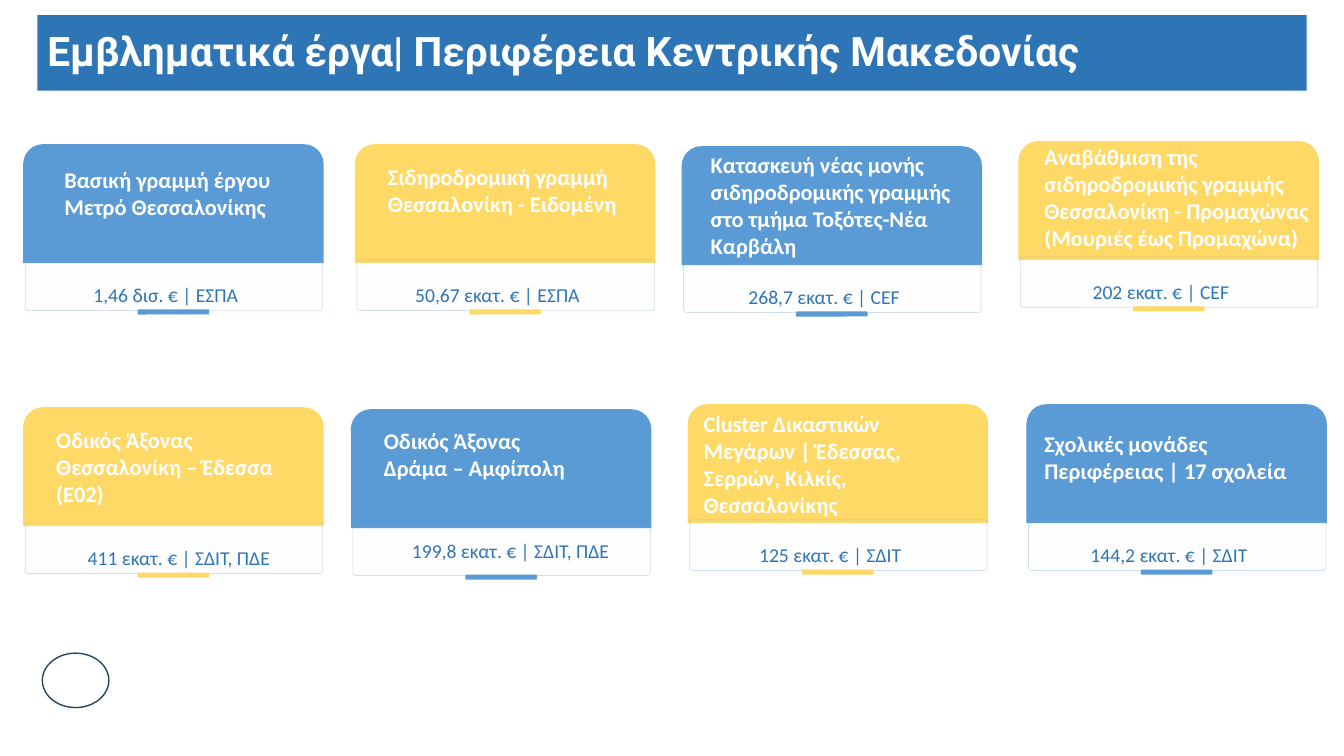
from lxml import etree
from pptx import Presentation
from pptx.dml.color import RGBColor
from pptx.enum.shapes import MSO_SHAPE
from pptx.enum.text import MSO_ANCHOR, PP_ALIGN
from pptx.oxml.ns import qn
from pptx.util import Inches, Pt

TOP_ROUNDED = MSO_SHAPE.ROUND_2_SAME_RECTANGLE
ROUNDED = MSO_SHAPE.ROUNDED_RECTANGLE
OVAL = MSO_SHAPE.OVAL
TOP, MIDDLE = MSO_ANCHOR.TOP, MSO_ANCHOR.MIDDLE
LEFT, CENTER = PP_ALIGN.LEFT, PP_ALIGN.CENTER

BLUE = RGBColor(0x5B, 0x9B, 0xD5)
YELLOW = RGBColor(0xFF, 0xD9, 0x66)
DARK_BLUE = RGBColor(0x2E, 0x75, 0xB6)
NAVY = RGBColor(0x28, 0x44, 0x5D)
GREY = RGBColor(0xE7, 0xE6, 0xE6)
WHITE = RGBColor(0xFF, 0xFF, 0xFF)

CARD_WIDTH, HEADER_HEIGHT = 2.98, 1.18
PANEL_WIDTH, PANEL_HEIGHT = 2.95, 0.5
BAR_WIDTH, BAR_HEIGHT = 0.71, 0.05

# Card left and top, colour, project name with its box, amount with its box.
# Boxes are left, top, width, height measured from the card's corner.
AMOUNT_BOX = (0.4, 1.32, 2.03, 0.34)
CARDS = [
    (0.23, 1.43, BLUE, "Βασική γραμμή έργου Μετρό Θεσσαλονίκης",
     (0.31, 0.17, 2.9, 0.64), "1,46 δισ. € | ΕΣΠΑ", AMOUNT_BOX),
    (3.52, 1.43, YELLOW, "Σιδηροδρομική γραμμή Θεσσαλονίκη - Ειδομένη",
     (0.23, 0.14, 2.9, 0.64), "50,67 εκατ. € | ΕΣΠΑ", AMOUNT_BOX),
    (6.76, 1.45, BLUE,
     "Κατασκευή νέας μονής σιδηροδρομικής γραμμής στο τμήμα Τοξότες-Νέα Καρβάλη",
     (0.19, 0, 2.9, 1.18), "268,7 εκατ. € | CEF", AMOUNT_BOX),
    (10.1, 1.4, YELLOW,
     "Αναβάθμιση της σιδηροδρομικής γραμμής Θεσσαλονίκη - Προμαχώνας "
     "(Μουριές έως Προμαχώνα)",
     (0.16, -0.03, 2.9, 1.18), "202 εκατ. € | CEF", AMOUNT_BOX),
    (0.23, 4.04, YELLOW, "Οδικός Άξονας\nΘεσσαλονίκη – Έδεσσα (Ε02)",
     (0.23, 0.14, 2.46, 0.91), "411 εκατ. € | ΣΔΙΤ, ΠΔΕ", (0.4, 1.32, 2.29, 0.34)),
    (3.48, 4.06, BLUE, "Οδικός Άξονας\nΔράμα – Αμφίπολη",
     (0.23, 0.13, 2.9, 0.64), "199,8 εκατ. € | ΣΔΙΤ, ΠΔΕ", (0.32, 1.23, 2.53, 0.34)),
    (6.82, 4.01, YELLOW,
     "Cluster Δικαστικών Μεγάρων | Έδεσσας, Σερρών, Κιλκίς, Θεσσαλονίκης",
     (0.06, 0.01, 2.9, 1.18), "125 εκατ. € | ΣΔΙΤ", AMOUNT_BOX),
    (10.18, 4.01, BLUE, "Σχολικές μονάδες Περιφέρειας | 17 σχολεία",
     (0.08, 0.21, 2.9, 0.64), "144,2 εκατ. € | ΣΔΙΤ", AMOUNT_BOX),
]


def add_block(shapes, kind, box, color):
    """Add a borderless filled shape without a shadow."""
    shape = shapes.add_shape(kind, *(Inches(length) for length in box))
    shape.shadow.inherit = False
    shape.fill.solid()
    shape.fill.fore_color.rgb = color
    shape.line.fill.background()
    return shape


def write(text_frame, text, font_name, size, color, bold, anchor, alignment):
    text_frame.text = text
    text_frame.word_wrap = True
    text_frame.vertical_anchor = anchor
    for paragraph in text_frame.paragraphs:
        paragraph.alignment = alignment
        for run in paragraph.runs:
            run.font.name = font_name
            run.font.size = Pt(size)
            run.font.bold = bold
            run.font.color.rgb = color


presentation = Presentation()
presentation.slide_width = Inches(13.33)
presentation.slide_height = Inches(7.5)
slide = presentation.slides.add_slide(presentation.slide_layouts[5])

title = slide.shapes.title
title.left, title.top = Inches(0.37), Inches(0.15)
title.width, title.height = Inches(12.59), Inches(0.75)
title.fill.solid()
title.fill.fore_color.rgb = DARK_BLUE
write(title.text_frame, "Εμβληματικά έργα| Περιφέρεια Κεντρικής Μακεδονίας",
      "Roboto", 29, WHITE, True, MIDDLE, LEFT)
title.text_frame.paragraphs[0].line_spacing = 0.9

for left, top, color, project, project_box, amount, amount_box in CARDS:
    card = slide.shapes.add_group_shape().shapes
    add_block(card, TOP_ROUNDED, (left, top, CARD_WIDTH, HEADER_HEIGHT), color)

    panel = add_block(card, TOP_ROUNDED,
                      (left + 0.02, top + 1.15, PANEL_WIDTH, PANEL_HEIGHT), GREY)
    panel.adjustments[0], panel.adjustments[1] = 0, 0.06
    panel.line.color.rgb = BLUE
    panel.line.width = Pt(0.5)
    fill_color, line_color = panel.fill._xPr.iter(qn("a:srgbClr"))
    for color_element, opacity in ((fill_color, 4), (line_color, 30)):
        etree.SubElement(color_element, qn("a:alpha"), val=str(opacity * 1000))

    bar_left = left + (CARD_WIDTH - BAR_WIDTH) / 2
    add_block(card, ROUNDED, (bar_left, top + 1.64, BAR_WIDTH, BAR_HEIGHT), color)

    for shapes, text, box, style in (
        (card, amount, amount_box, (14, DARK_BLUE, False, MIDDLE, CENTER)),
        (slide.shapes, project, project_box, (16, WHITE, True, TOP, LEFT)),
    ):
        x, y, width, height = box
        label = shapes.add_textbox(Inches(left + x), Inches(top + y),
                                   Inches(width), Inches(height))
        write(label.text_frame, text, "Calibri", *style)

ellipse = add_block(slide.shapes, OVAL, (0.42, 6.48, 0.66, 0.54), WHITE)
ellipse.fill.background()
ellipse.line.color.rgb = NAVY
ellipse.line.width = Pt(1)

presentation.save("out.pptx")
